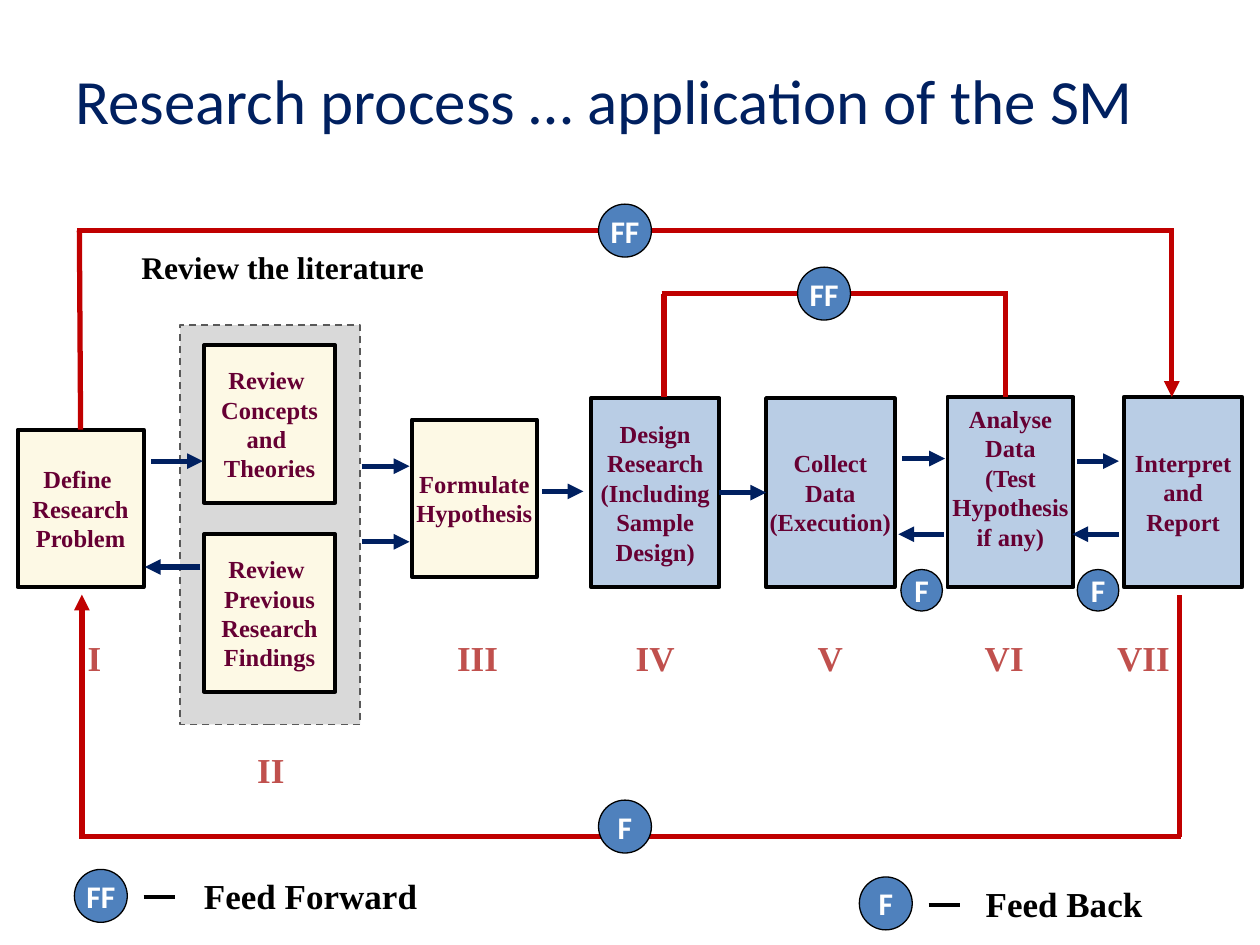
from lxml import etree
from pptx import Presentation
from pptx import util as u
from pptx.dml.color import RGBColor
from pptx.enum import dml, shapes, text
from pptx.oxml.ns import qn

PX = 9144
COLORS = {
    "navy": "002060", "red": "C00000", "black": "000000", "white": "FFFFFF",
    "cream": "FDF9E5", "sky": "B9CDE5", "wine": "660033", "coral": "C0504D",
    "badge": "4F81BD", "panel": "D9D9D9", "panel_edge": "595959",
}
SERIF = "Times New Roman"
SANS = "Calibri"

STAGES = [
    ("Define \nResearch\nProblem", (0, 26, 100, 125), "cream", "I", 36, 50, 0),
    ("Formulate\nHypothesis", (313, 18, 99, 125), "cream", "III", 336, 58, 0),
    ("Design\nResearch\n(Including\nSample\nDesign)", (455, 1, 102, 150), "sky", "IV", 477, 58, 0),
    ("Collect\nData\n(Execution)", (594, 1, 102, 150), "sky", "V", 616, 58, 0),
    ("Analyse\nData\n(Test\nHypothesis\nif any)", (738, 0, 100, 151), "sky", "VI", 754, 58, 23),
    ("Interpret\nand\nReport", (878, 0, 94, 151), "sky", "VII", 856, 75, 0),
]
FLOW_ARROWS = [
    (106, 51, 147, 51), (273, 55, 311, 55), (273, 115, 311, 115),
    (416, 75, 449, 75), (702, 49, 736, 49), (841, 51, 874, 51),
    (145, 135, 101, 135), (735, 109, 699, 109), (874, 109, 837, 109),
]


def px(n):
    return u.Emu(int(n * PX))


def rgb(name):
    return RGBColor.from_string(COLORS[name])


def write(sp, content, size=14, font=SERIF, color="black", bold=True,
          align=text.PP_ALIGN.CENTER, wrap=True):
    tf = sp.text_frame
    tf.word_wrap = wrap
    tf.vertical_anchor = text.MSO_ANCHOR.MIDDLE
    for i, row in enumerate(content.split("\n")):
        p = tf.add_paragraph() if i else tf.paragraphs[0]
        p.alignment = align
        r = p.add_run()
        r.text = row
        r.font.size = u.Pt(size)
        r.font.name = font
        r.font.bold = bold
        r.font.color.rgb = rgb(color)


def label(s, box, content, **fmt):
    sp = s.shapes.add_textbox(*map(px, box))
    write(sp, content, **fmt)


def shape(s, kind, box, fill, edge, width):
    sp = s.shapes.add_shape(kind, *map(px, box))
    sp.shadow.inherit = False
    sp.fill.solid()
    sp.fill.fore_color.rgb = rgb(fill)
    sp.line.color.rgb = rgb(edge)
    sp.line.width = u.Pt(width)
    tf = sp.text_frame
    tf.margin_left = tf.margin_right = tf.margin_top = tf.margin_bottom = 0
    return sp


def line(s, x1, y1, x2, y2, color="navy", width=3, arrow=False):
    c = s.shapes.add_connector(shapes.MSO_CONNECTOR.STRAIGHT, *map(px, (x1, y1, x2, y2)))
    c.line.color.rgb = rgb(color)
    c.line.width = u.Pt(width)
    if arrow:
        etree.SubElement(c.line._get_or_add_ln(), qn("a:tailEnd"), type="triangle")
    etree.SubElement(c._element.spPr, qn("a:effectLst"))
    return c


def step(s, box, content, fill, bottom=0):
    sp = shape(s, shapes.MSO_SHAPE.RECTANGLE, box, fill, "black", 2.25)
    sp.text_frame.margin_bottom = px(bottom)
    write(sp, content, color="wine", wrap=False)
    return sp


def badge(s, x, y, content, size=42):
    sp = shape(s, shapes.MSO_SHAPE.OVAL, (x, y, size, size), "badge", "black", 0.75)
    write(sp, content, size=18, font=SANS, color="white", wrap=False)


def numeral(s, x, y, w, content):
    label(s, (x, y, w, 33), content, size=20, color="coral")


def title(s, box):
    label(s, box, "Research process … application of the SM", size=36, font=SANS,
          color="navy", bold=False, align=text.PP_ALIGN.LEFT)


def literature(s, box):
    x, y, w, h = box
    sp = shape(s, shapes.MSO_SHAPE.RECTANGLE, box, "panel", "panel_edge", 1)
    sp.line.dash_style = dml.MSO_LINE.DASH
    reviews = ["Review \nConcepts\nand \nTheories", "Review \nPrevious\nResearch\nFindings"]
    for i, content in enumerate(reviews):
        step(s, (x + 19, y + 16 + 150 * i, 104, 125), content, "cream")
    label(s, (x - 60, y - 67, 283, 42), "Review the literature", size=18)
    numeral(s, x + 47, y + h + 19, 50, "II")


def flow(s, box):
    x, y, w, h = box
    steps = {}
    for content, (dx, dy, sw, sh), fill, number, nx, nw, bottom in STAGES:
        steps[number] = step(s, (x + dx, y + dy, sw, sh), content, fill, bottom)
        numeral(s, x + nx, y + h + 39, nw, number)
    for x1, y1, x2, y2 in FLOW_ARROWS:
        line(s, x + x1, y + y1, x + x2, y + y2, arrow=True)
    c = line(s, x + 557, y + 76, x + 594, y + 76, arrow=True)
    c.begin_connect(steps["IV"], 3)
    c.end_connect(steps["V"], 1)
    for dx in (701, 841):
        badge(s, x + dx, y + h - 14, "F", 33)
    return steps


def forward_loop(s, box, left_drop, badge_dx, arrow=False, target=None):
    x, y, w, h = box
    line(s, x - 2, y, x + w + 2, y, "red")
    c = line(s, x, y, x, y + left_drop, "red")
    if target is not None:
        c.end_connect(target, 0)
    line(s, x + w, y, x + w, y + h, "red", arrow=arrow)
    badge(s, x + badge_dx, y - 21, "FF")


def feedback_loop(s, box):
    x, y, w, h = box
    line(s, x, y + h, x, y, "red", arrow=True)
    line(s, x - 2, y + h, x + w + 1, y + h, "red")
    line(s, x + w, y + h, x + w, y, "red")
    badge(s, x + 410, y + h - 29, "F")


def legend(s, box, mark, meaning, text_dx):
    x, y, w, h = box
    badge(s, x, y, mark, h)
    line(s, x + 55, y + 22, x + 80, y + 22, "black", 2.25)
    label(s, (x + text_dx, y, w - text_dx, h), meaning, size=20)


def main():
    prs = Presentation()
    prs.slide_width, prs.slide_height = px(1000), px(750)
    s = prs.slides.add_slide(prs.slide_layouts[6])
    title(s, (50, 21, 899, 116))
    literature(s, (143, 258, 143, 317))
    steps = flow(s, (14, 315, 972, 151))
    forward_loop(s, (63, 183, 867, 132), 158, 412, arrow=True, target=steps["I"])
    forward_loop(s, (527, 233, 271, 82), 82, 106)
    feedback_loop(s, (65, 472, 871, 192))
    legend(s, (59, 690, 300, 42), "FF", "Feed Forward", 75)
    legend(s, (682, 696, 275, 42), "F", "Feed Back", 50)
    prs.save("out.pptx")


if __name__ == "__main__":
    main()
